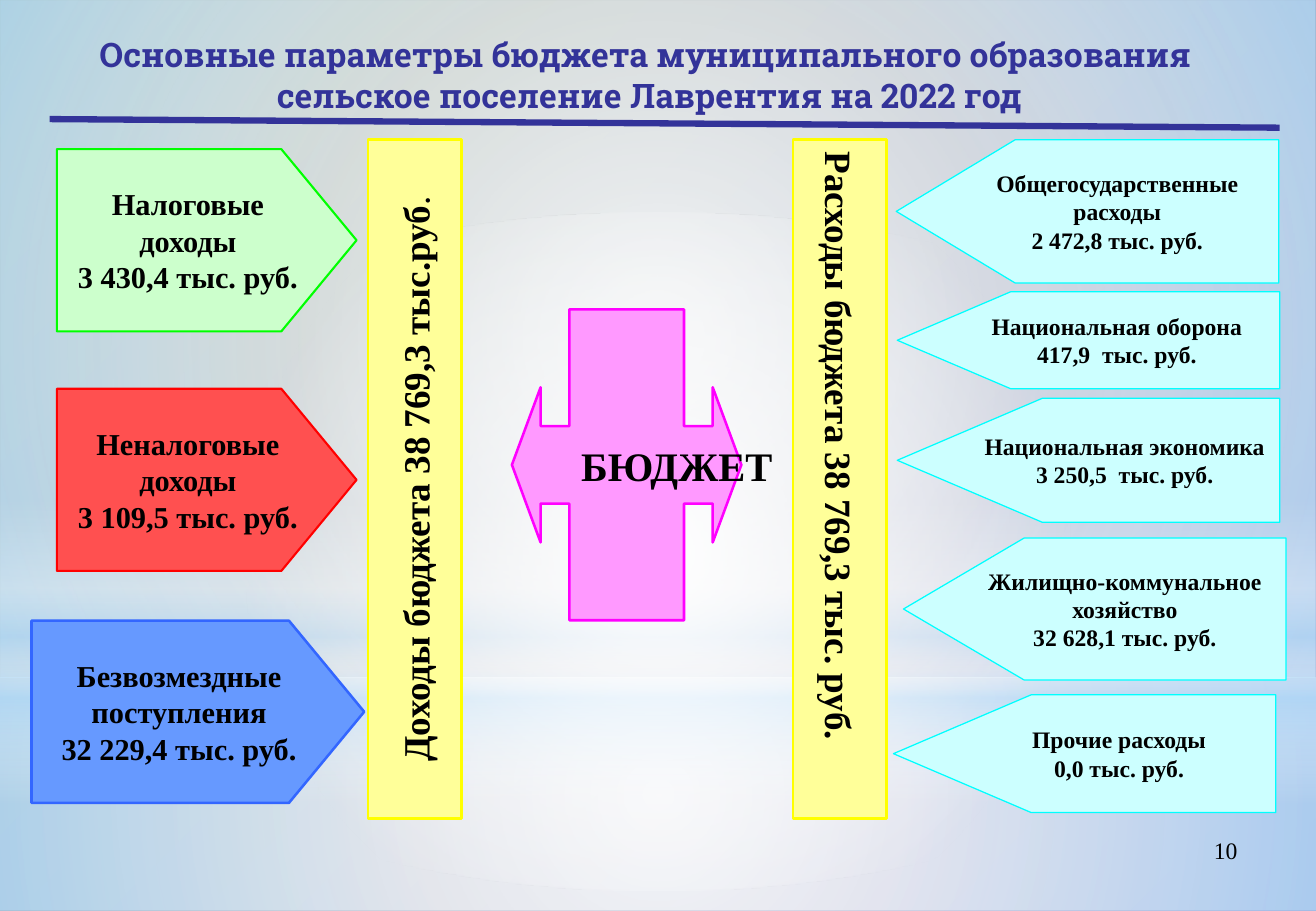
from lxml import etree
from pptx import Presentation
from pptx.dml.color import RGBColor
from pptx.enum import shapes as sh, text as tx
from pptx.oxml.ns import qn
from pptx.util import Cm, Pt

WIDE, HIGH = 27.53, 19.05
SERIF, SLAB = "Times New Roman", "Roboto Slab"
BLACK, NAVY = "000000", "333399"
KIND = sh.MSO_SHAPE

TITLE = ("Основные параметры бюджета муниципального образования  "
         "сельское поселение Лаврентия на 2022 год")
PAGE = "10"

# Backdrop: kind, top, height, radial, stops (position, colour, opacity)
SKY = [
    (KIND.RECTANGLE, 14.17, 4.88, True,
     [(0, "FFFFFF", 91), (37, "FFFFFF", 76), (100, "B4DCFA", 79)]),
    (KIND.RECTANGLE, 0, 14.17, True,
     [(0, "FFFFFF", 89), (48, "FFFFFF", 62), (100, "B4DCFA", 79)]),
    (KIND.RECTANGLE, 10.46, 6.35, False,
     [(0, "FFFFFF", 0), (29, "FFFFFF", 30), (45, "B4DCFA", 40),
      (55, "FFFFFF", 26), (65, "B4DCFA", 60), (100, "FFFFFF", 0)]),
    (KIND.OVAL, 4.45, 14.17, True, [(0, "FFFFFF", 100), (56, "FFFFFF", 0)]),
]

# Income: left, top, width, fill, line, line width, lines of text
INCOME = [
    (1.19, 3.12, 6.27, "CCFFCC", "00FF00", 1.25,
     ["Налоговые доходы", "3 430,4 тыс. руб."]),
    (1.19, 8.13, 6.27, "FF5050", "FF0000", 1.25,
     ["Неналоговые доходы", "3 109,5 тыс. руб."]),
    (0.66, 12.98, 6.96, "6699FF", "3366FF", 1.5,
     ["Безвозмездные поступления", "32 229,4 тыс. руб."]),
]

# Spending: left, top, height, point, wrap, lines of text
SPEND = [
    (18.75, 2.92, 3.0, 0.83, False,
     ["Общегосударственные", "расходы", "2 472,8 тыс. руб."]),
    (18.77, 6.1, 2.03, 1.17, False,
     ["Национальная оборона", "417,9  тыс. руб."]),
    (18.77, 8.33, 2.59, 1.17, False,
     ["Национальная экономика", "3 250,5  тыс. руб."]),
    (18.9, 11.25, 2.97, 0.85, True,
     ["Жилищно-коммунальное хозяйство", "32 628,1 тыс. руб."]),
    (18.69, 14.53, 2.46, 1.17, False,
     ["Прочие расходы", "0,0 тыс. руб."]),
]

# Totals: left, text direction, runs (text, bold)
TOTALS = [
    (7.7, "vert270", [("Доходы бюджета 38 769,3 тыс.руб", True), (".", False)]),
    (16.59, "eaVert", [("Расходы бюджета 38 769,3 тыс. руб.", True)]),
]


def rgb(code):
    return RGBColor.from_string(code)


def write(frame, lines, size, font=SERIF, color=BLACK, align="CENTER",
          wrap=True):
    """Each line is a list of (text, bold) runs."""
    frame.word_wrap = wrap
    frame.auto_size = tx.MSO_AUTO_SIZE.NONE
    frame.vertical_anchor = tx.MSO_ANCHOR.MIDDLE
    for i, runs in enumerate(lines):
        para = frame.add_paragraph() if i else frame.paragraphs[0]
        para.alignment = getattr(tx.PP_ALIGN, align)
        for words, bold in runs:
            run = para.add_run()
            run.text = words
            run.font.name, run.font.size = font, Pt(size)
            run.font.bold = bold
            run.font.color.rgb = rgb(color)


def bold(lines):
    return [[(line, True)] for line in lines]


def body(shape, key, value):
    shape.text_frame._txBody.bodyPr.set(key, value)


def add(kind, left, top, width, height, fill, line, weight):
    shape = slide.shapes.add_shape(kind, Cm(left), Cm(top), Cm(width),
                                   Cm(height))
    shape.shadow.inherit = False
    shape.fill.solid()
    shape.fill.fore_color.rgb = rgb(fill)
    shape.line.color.rgb = rgb(line)
    shape.line.width = Pt(weight)
    return shape


def fade(shape, radial, stops):
    """Swap the solid fill for a gradient with opacity."""
    grad = etree.Element(qn("a:gradFill"), rotWithShape="1")
    row = etree.SubElement(grad, qn("a:gsLst"))
    for pos, color, alpha in stops:
        stop = etree.SubElement(row, qn("a:gs"), pos=str(pos * 1000))
        tone = etree.SubElement(stop, qn("a:srgbClr"), val=color)
        etree.SubElement(tone, qn("a:alpha"), val=str(alpha * 1000))
    if radial:
        ring = etree.SubElement(grad, qn("a:path"), path="circle")
        etree.SubElement(ring, qn("a:fillToRect"),
                         {side: "50000" for side in "ltrb"})
    else:
        etree.SubElement(grad, qn("a:lin"), ang="5400000", scaled="0")
    props = shape._element.spPr
    props.replace(props.find(qn("a:solidFill")), grad)


prs = Presentation()
prs.slide_width, prs.slide_height = Cm(WIDE), Cm(HIGH)
slide = prs.slides.add_slide(prs.slide_layouts[5])

# Backdrop
back = slide.background.fill
back.gradient()
back.gradient_angle = 315
for stop, color in zip(back.gradient_stops, ("96AB94", "8488C4")):
    stop.color.rgb = rgb(color)
for kind, top, height, radial, stops in SKY:
    layer = add(kind, 0, top, WIDE, height, "FFFFFF", "FFFFFF", 1)
    layer.line.fill.background()
    fade(layer, radial, stops)

# Title, lifted above the backdrop, and its rule
title = slide.shapes.title
title.left, title.top, title.width, title.height = (
    Cm(0.79), Cm(0.58), Cm(25.6), Cm(1.96))
write(title.text_frame, bold([TITLE]), 20, SLAB, NAVY)
slide.shapes._spTree.append(title._element)

rule = slide.shapes.add_connector(sh.MSO_CONNECTOR.STRAIGHT, Cm(1.04),
                                  Cm(2.49), Cm(26.77), Cm(2.67))
rule.line.color.rgb = rgb(NAVY)
rule.line.width = Pt(3.75)
etree.SubElement(rule._element.spPr, qn("a:effectLst"))

# Budget arrow in the centre
hub = add(KIND.UP_DOWN_ARROW_CALLOUT, 9.86, 7.32, 6.5, 4.8,
          "FF99FF", "FF00FF", 1.5)
hub.rotation = 270
for i, value in enumerate((0.338, 0.338, 0.125, 0.5)):
    hub.adjustments[i] = value
write(hub.text_frame, bold(["БЮДЖЕТ"]), 24, wrap=False)
body(hub, "vert", "eaVert")

# Totals
for left, turn, runs in TOTALS:
    bar = add(KIND.RECTANGLE, left, 2.92, 1.96, 14.2, "FFFF99", "FFFF00", 1.5)
    write(bar.text_frame, [runs], 22, wrap=False)
    body(bar, "vert", turn)

# Income arrows
for left, top, width, fill, line, weight, lines in INCOME:
    arrow = add(KIND.PENTAGON, left, top, width, 3.81, fill, line, weight)
    arrow.adjustments[0] = 0.413
    write(arrow.text_frame, bold(lines), 18)

# Spending arrows point left, with the text kept upright
for left, top, height, point, wrap, lines in SPEND:
    arrow = add(KIND.PENTAGON, left, top, 8, height, "CCFFFF", "00FFFF", 0.75)
    arrow.adjustments[0] = point
    arrow.rotation = 180
    write(arrow.text_frame, bold(lines), 14, wrap=wrap)
    body(arrow, "rot", "10800000")

# Page number
page = slide.shapes.add_textbox(Cm(19.71), Cm(17.35), Cm(6.43), Cm(1.32))
write(page.text_frame, [[(PAGE, False)]], 14, align="RIGHT")
page.text_frame.vertical_anchor = tx.MSO_ANCHOR.TOP

prs.save("out.pptx")
